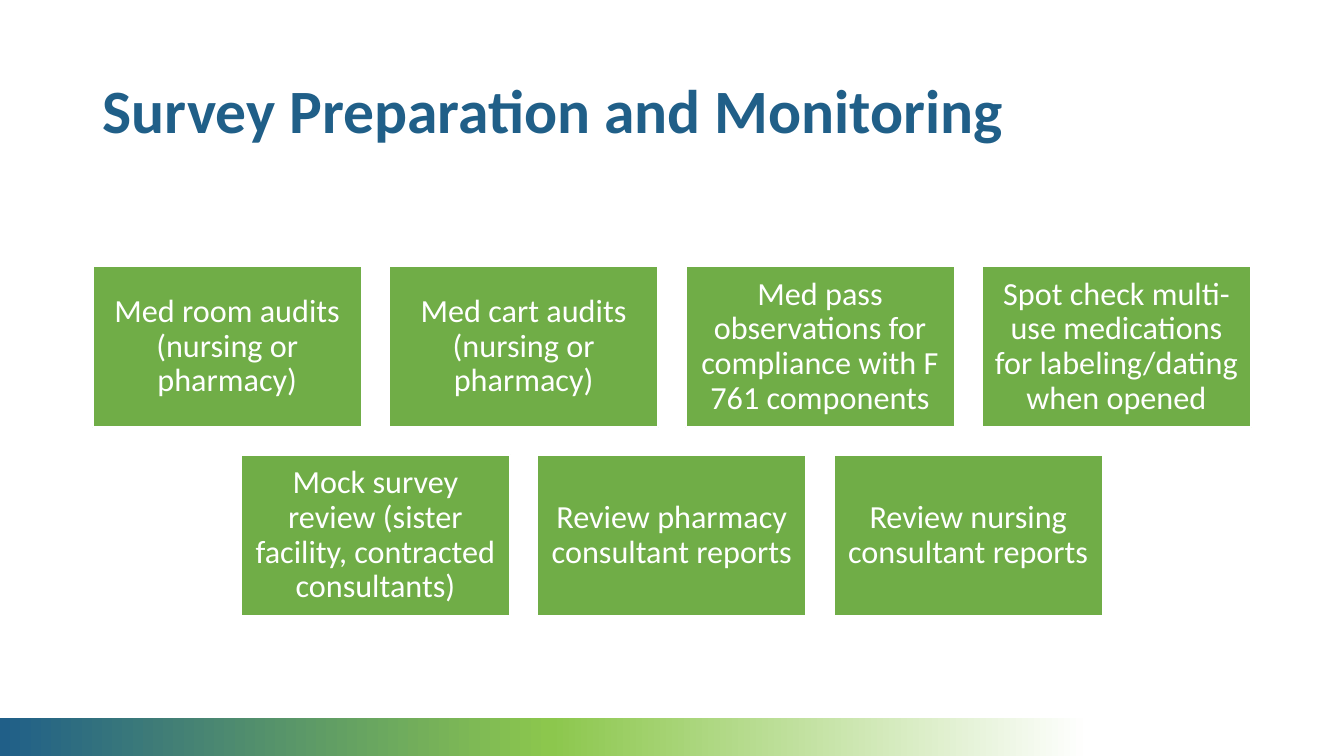
"""Build the survey preparation and monitoring slide."""
import copy
import dataclasses

import pptx
import pptx.dml.color
import pptx.enum.shapes
import pptx.enum.text
import pptx.oxml.ns
import pptx.util

Inches = pptx.util.Inches
Pt = pptx.util.Pt
RGBColor = pptx.dml.color.RGBColor
ALIGN = pptx.enum.text.PP_ALIGN
ANCHOR = pptx.enum.text.MSO_ANCHOR
RECT = pptx.enum.shapes.MSO_SHAPE.RECTANGLE

BLUE = RGBColor(0x20, 0x5F, 0x88)
LIME = RGBColor(0x8C, 0xC7, 0x4D)
GREEN = RGBColor(0x70, 0xAD, 0x47)
WHITE = RGBColor(0xFF, 0xFF, 0xFF)

WIDE, HIGH = 13.33, 7.5
CARD_W, CARD_H, GAP = 2.67, 1.6, 0.27
BAR_H = 0.38
STOPS = [(0, BLUE), (0.41, LIME), (0.81, WHITE)]


@dataclasses.dataclass
class Row:
    top: float
    labels: list[str]


ROWS = [
    Row(2.64, [
        "Med room audits (nursing or pharmacy)",
        "Med cart audits (nursing or pharmacy)",
        "Med pass observations for compliance with F 761 components",
        "Spot check multi-use medications for labeling/dating when opened",
    ]),
    Row(2.64 + CARD_H + GAP, [
        "Mock survey review (sister facility, contracted consultants)",
        "Review pharmacy consultant reports",
        "Review nursing consultant reports",
    ]),
]


def apply(item: object, form: dict) -> None:
    for key, value in form.items():
        setattr(item, key, value)


def write(shape, text: str, size: int, color: RGBColor, align, bold: bool, inset: float) -> None:
    frame = shape.text_frame
    apply(frame, {"word_wrap": True, "vertical_anchor": ANCHOR.MIDDLE,
                  "margin_left": Inches(inset), "margin_right": Inches(inset)})
    para = frame.paragraphs[0]
    apply(para, {"text": text, "alignment": align, "line_spacing": 0.9})
    font = para.runs[0].font
    apply(font, {"name": "Calibri", "size": Pt(size), "bold": bold})
    font.color.rgb = color


def add_rect(slide, left: float, top: float, width: float, height: float):
    shape = slide.shapes.add_shape(RECT, Inches(left), Inches(top), Inches(width), Inches(height))
    shape.shadow.inherit = False
    return shape


def draw_bar(slide) -> None:
    bar = add_rect(slide, 0, HIGH - BAR_H, WIDE, BAR_H)
    bar.line.fill.background()
    bar.fill.gradient()
    bar.fill.gradient_angle = 0
    nodes = bar._element.spPr.find(".//" + pptx.oxml.ns.qn("a:gsLst"))
    nodes.append(copy.deepcopy(nodes[0]))
    for stop, (place, color) in zip(bar.fill.gradient_stops, STOPS):
        stop.position = place
        stop.color.rgb = color


def draw_row(slide, row: Row) -> None:
    step = CARD_W + GAP
    start = (WIDE - len(row.labels) * step + GAP) / 2
    for index, label in enumerate(row.labels):
        card = add_rect(slide, start + index * step, row.top, CARD_W, CARD_H)
        card.fill.solid()
        card.fill.fore_color.rgb = GREEN
        card.line.color.rgb = WHITE
        card.line.width = Pt(1.5)
        write(card, label, 23, WHITE, ALIGN.CENTER, False, 0.1)


def main() -> None:
    deck = pptx.Presentation()
    apply(deck, {"slide_width": Inches(WIDE), "slide_height": Inches(HIGH)})
    slide = deck.slides.add_slide(deck.slide_layouts[6])
    draw_bar(slide)
    title = slide.shapes.add_textbox(Inches(0.92), Inches(0.4), Inches(11.5), Inches(1.45))
    write(title, "Survey Preparation and Monitoring", 44, BLUE, ALIGN.LEFT, True, 0.1)
    for row in ROWS:
        draw_row(slide, row)
    deck.save("out.pptx")


if __name__ == "__main__":
    main()
